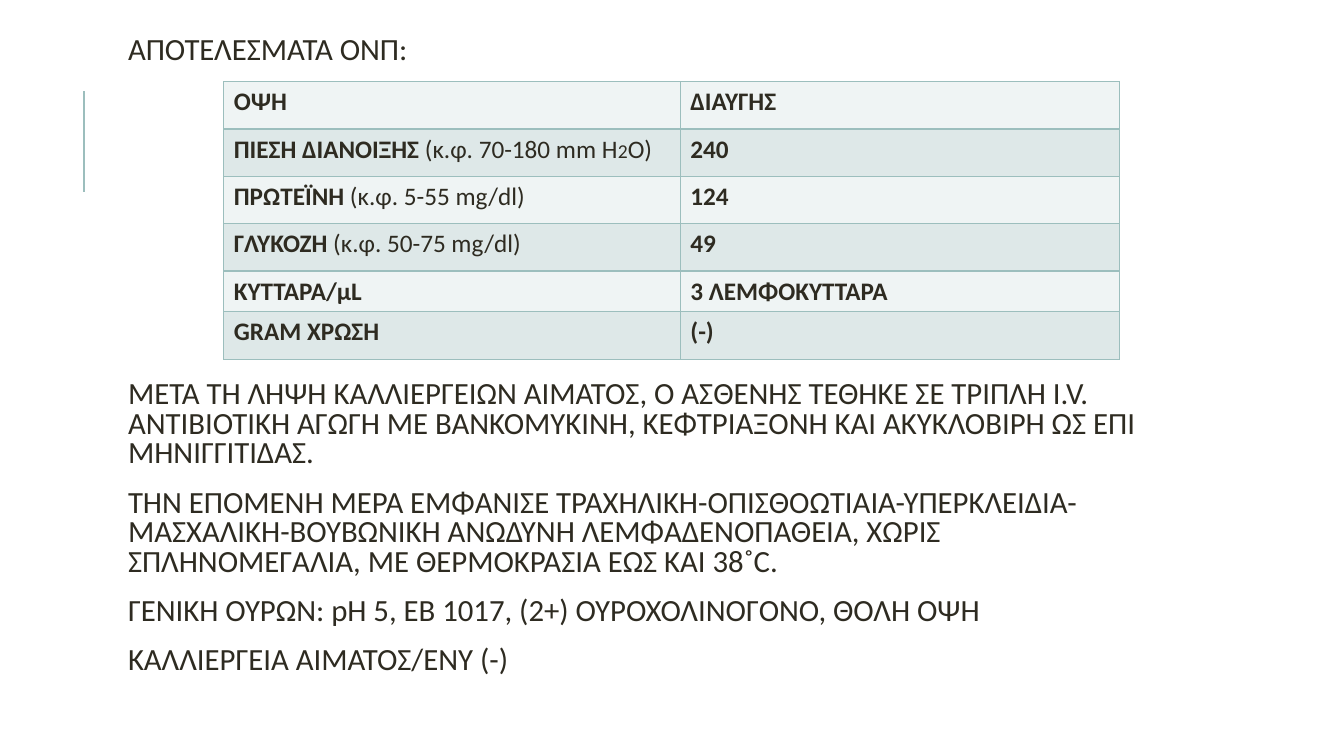
"""Build the slide with the lumbar puncture results and the clinical course."""
from typing import NamedTuple

from lxml import etree
from pptx import Presentation
from pptx import util as u
from pptx.dml.color import RGBColor
from pptx.enum import shapes, text
from pptx.oxml import ns

INK = RGBColor(0x2E, 0x2B, 0x21)
TEAL = RGBColor(0x9C, 0xBE, 0xBD)
BANDS = (RGBColor(0xEF, 0xF4, 0xF4), RGBColor(0xDE, 0xE8, 0xE8))
FONT = "Calibri"
INDENT = u.Pt(7.2)
SPACE_BEFORE = u.Pt(12)
TABLE_GAP = u.Pt(222.5)


class Span(NamedTuple):
    text: str
    bold: bool = True
    size: float = 18


class Result(NamedTuple):
    label: tuple[Span, ...]
    value: str
    height: float = 33.84


class Note(NamedTuple):
    text: str
    before: int = SPACE_BEFORE


RESULTS = (
    Result((Span("ΟΨΗ"),), "ΔΙΑΥΓΗΣ"),
    Result((Span("ΠΙΕΣΗ ΔΙΑΝΟΙΞΗΣ "), Span("(κ.φ. 70-180 mm H", False),
            Span("2", False, 14), Span("O)", False)), "240"),
    Result((Span("ΠΡΩΤΕΪΝΗ"), Span(" (κ.φ. 5-55 mg/dl)", False)), "124"),
    Result((Span("ΓΛΥΚΟΖΗ"), Span(" (κ.φ. 50-75 mg/dl)", False)), "49"),
    Result((Span("ΚΥΤΤΑΡΑ/μL"),), "3 ΛΕΜΦΟΚΥΤΤΑΡΑ", 28.08),
    Result((Span("GRAM ΧΡΩΣΗ"),), "(-)"),
)
NOTES = (
    Note("ΑΠΟΤΕΛΕΣΜΑΤΑ ΟΝΠ:"),
    Note("ΜΕΤΑ ΤΗ ΛΗΨΗ ΚΑΛΛΙΕΡΓΕΙΩΝ ΑΙΜΑΤΟΣ, Ο ΑΣΘΕΝΗΣ ΤΕΘΗΚΕ ΣΕ ΤΡΙΠΛΗ I.V. "
         "ΑΝΤΙΒΙΟΤΙΚΗ ΑΓΩΓΗ ΜΕ ΒΑΝΚΟΜΥΚΙΝΗ, ΚΕΦΤΡΙΑΞΟΝΗ ΚΑΙ ΑΚΥΚΛΟΒΙΡΗ ΩΣ ΕΠΙ "
         "ΜΗΝΙΓΓΙΤΙΔΑΣ.", TABLE_GAP),
    Note("ΤΗΝ ΕΠΟΜΕΝΗ ΜΕΡΑ ΕΜΦΑΝΙΣΕ ΤΡΑΧΗΛΙΚΗ-ΟΠΙΣΘΟΩΤΙΑΙΑ-ΥΠΕΡΚΛΕΙΔΙΑ-"
         "ΜΑΣΧΑΛΙΚΗ-ΒΟΥΒΩΝΙΚΗ ΑΝΩΔΥΝΗ ΛΕΜΦΑΔΕΝΟΠΑΘΕΙΑ, ΧΩΡΙΣ "
         "ΣΠΛΗΝΟΜΕΓΑΛΙΑ, ΜΕ ΘΕΡΜΟΚΡΑΣΙΑ ΕΩΣ ΚΑΙ 38˚C."),
    Note("ΓΕΝΙΚΗ ΟΥΡΩΝ: pH 5, EB 1017, (2+) ΟΥΡΟΧΟΛΙΝΟΓΟΝΟ, ΘΟΛΗ ΟΨΗ"),
    Note("ΚΑΛΛΙΕΡΓΕΙΑ ΑΙΜΑΤΟΣ/ΕΝΥ (-)"),
)


def style_run(r, size: float, bold: bool = False) -> None:
    r.font.name, r.font.size, r.font.bold = FONT, u.Pt(size), bold
    r.font.color.rgb = INK


def add_rule(s) -> None:
    x = u.Pt(59.76)
    rule = s.shapes.add_connector(shapes.MSO_CONNECTOR.STRAIGHT,
                                  x, u.Pt(136.8), x, u.Pt(64.8))
    rule.line.color.rgb, rule.line.width = TEAL, u.Pt(1.5)
    etree.SubElement(rule.element.spPr, ns.qn("a:effectLst"))


def set_bullet(p) -> None:
    pPr = p._p.get_or_add_pPr()
    pPr.set("marL", str(INDENT))
    pPr.set("indent", str(-INDENT))
    color = etree.SubElement(pPr, ns.qn("a:buClr"))
    etree.SubElement(color, ns.qn("a:srgbClr"), val=str(TEAL))
    etree.SubElement(pPr, ns.qn("a:buChar"), char=" ")


def fill_body(sp, notes: tuple[Note, ...]) -> None:
    sp.left, sp.top = u.Pt(80.64), u.Pt(23.04)
    sp.width, sp.height = u.Pt(765.36), u.Pt(496.8)
    tf = sp.text_frame
    tf.word_wrap, tf.auto_size = True, text.MSO_AUTO_SIZE.NONE
    tf.vertical_anchor = text.MSO_ANCHOR.TOP
    tf.margin_left = tf.margin_right = tf.margin_top = tf.margin_bottom = u.Pt(3.6)
    tf.text = "\n".join(note.text for note in notes)
    for p, note in zip(tf.paragraphs, notes):
        p.alignment = text.PP_ALIGN.LEFT
        p.line_spacing = 0.8
        p.space_before, p.space_after = note.before, u.Pt(2)
        set_bullet(p)
        style_run(p.runs[0], 22)


def set_borders(cell) -> None:
    tcPr = cell._tc.get_or_add_tcPr()
    for i, side in enumerate(("lnL", "lnR", "lnT", "lnB")):
        ln = etree.Element(ns.qn(f"a:{side}"), w=str(u.Pt(1)))
        fill = etree.SubElement(ln, ns.qn("a:solidFill"))
        etree.SubElement(fill, ns.qn("a:srgbClr"), val=str(TEAL))
        tcPr.insert(i, ln)


def fill_cell(cell, spans: tuple[Span, ...], color: RGBColor) -> None:
    cell.fill.solid()
    cell.fill.fore_color.rgb = color
    set_borders(cell)
    p = cell.text_frame.paragraphs[0]
    for span in spans:
        r = p.add_run()
        r.text = span.text
        style_run(r, span.size, span.bold)


def add_results(s, results: tuple[Result, ...]) -> None:
    widths = (u.Pt(326.16), u.Pt(313.92))
    height = u.Pt(sum(result.height for result in results))
    table = s.shapes.add_table(len(results), len(widths), u.Pt(159.84),
                               u.Pt(58.32), sum(widths), height).table
    table.first_row = table.horz_banding = False
    for column, width in zip(table.columns, widths):
        column.width = width
    for i, result in enumerate(results):
        table.rows[i].height = u.Pt(result.height)
        for j, spans in enumerate((result.label, (Span(result.value),))):
            fill_cell(table.cell(i, j), spans, BANDS[i % 2])


def main() -> None:
    prs = Presentation()
    prs.slide_width, prs.slide_height = u.Pt(960), u.Pt(540)
    s = prs.slides.add_slide(prs.slide_layouts[1])
    title = s.shapes.title.element
    title.getparent().remove(title)
    add_rule(s)
    fill_body(s.placeholders[1], NOTES)
    add_results(s, RESULTS)
    prs.save("out.pptx")


if __name__ == "__main__":
    main()
